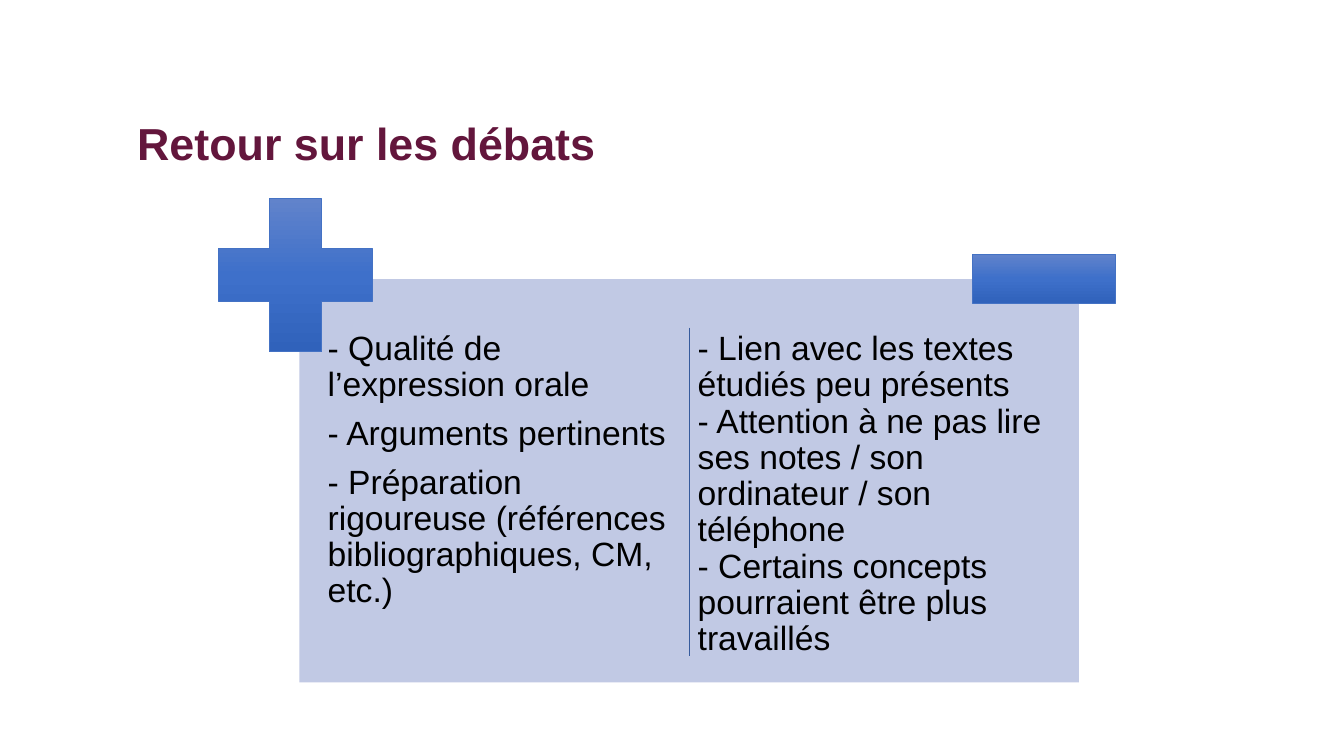
"""Build a slide weighing the strong and weak points of the debates."""
import copy

import pptx
import pptx.dml.color
import pptx.enum.shapes
import pptx.enum.text
import pptx.oxml.ns
import pptx.util
from lxml import etree

TITLE = "Retour sur les débats"
COLUMNS = [
    [
        "- Qualité de l’expression orale",
        "- Arguments pertinents",
        "- Préparation rigoureuse (références bibliographiques, CM, etc.)",
    ],
    [
        "- Lien avec les textes étudiés peu présents\n"
        "- Attention à ne pas lire ses notes / son ordinateur / son téléphone\n"
        "- Certains concepts pourraient être plus travaillés",
    ],
]
COLORS = {
    "title": "63163C", "text": "000000", "panel": "C1C9E4",
    "top": "6183CB", "middle": "3E70CA", "bottom": "3062BB",
    "outline": "4472C4", "divider": "365B9D",
}
GRADIENT = [(0, "top"), (0.5, "middle"), (1, "bottom")]
TITLE_FONT = {"name": "Arial", "size": pptx.util.Pt(32), "bold": True}
BODY_FONT = {"name": "Arial", "size": pptx.util.Pt(24), "bold": False}
BODY_PARAGRAPH = {"line_spacing": 0.9, "space_after": pptx.util.Pt(8.8)}
TITLE_AREA = (1.26, 1.06, 9.58, 0.77)
PANEL = (2.97, 2.77, 7.73, 4)
COLUMN_LEFT, COLUMN_TOP, COLUMN_STEP = 3.2, 3.24, 3.67
COLUMN_WIDTH, COLUMN_HEIGHT, INSET = 3.59, 3.42, 0.05
DIVIDER_TOP, DIVIDER_BOTTOM = 3.25, 6.51
SHAPES = pptx.enum.shapes.MSO_SHAPE
SIGNS = [
    (SHAPES.CROSS, (2.17, 1.97, 1.52, 1.52), [0.328]),
    (SHAPES.RECTANGLE, (9.64, 2.52, 1.42, 0.49), []),
]


def inches(lengths):
    return [pptx.util.Inches(length) for length in lengths]


def color(name):
    return pptx.dml.color.RGBColor.from_string(COLORS[name])


def apply(target, values):
    for name, value in values.items():
        setattr(target, name, value)


def style_spans(para, font, color_name):
    for span in para.runs:
        apply(span.font, font)
        span.font.color.rgb = color(color_name)


def add_title(page):
    title = page.shapes.title
    apply(title, dict(zip(("left", "top", "width", "height"), inches(TITLE_AREA))))
    title.text_frame.text = TITLE
    title.text_frame.vertical_anchor = pptx.enum.text.MSO_ANCHOR.MIDDLE
    para = title.text_frame.paragraphs[0]
    apply(para, {"line_spacing": 0.9, "alignment": pptx.enum.text.PP_ALIGN.LEFT})
    style_spans(para, TITLE_FONT, "title")


def add_panel(page):
    panel = page.shapes.add_shape(SHAPES.RECTANGLE, *inches(PANEL))
    panel.shadow.inherit = False
    panel.fill.solid()
    panel.fill.fore_color.rgb = color("panel")
    panel.line.fill.background()


def add_column(page, index, lines):
    left = COLUMN_LEFT + index * COLUMN_STEP
    area = (left, COLUMN_TOP, COLUMN_WIDTH, COLUMN_HEIGHT)
    frame = page.shapes.add_textbox(*inches(area)).text_frame
    margins = ("margin_left", "margin_top", "margin_right", "margin_bottom")
    apply(frame, dict.fromkeys(margins, pptx.util.Inches(INSET)))
    frame.word_wrap = True
    for number, line in enumerate(lines):
        para = frame.add_paragraph() if number else frame.paragraphs[0]
        para.text = line
        apply(para, BODY_PARAGRAPH)
        style_spans(para, BODY_FONT, "text")


def add_sign(page, kind, area, adjustments):
    sign = page.shapes.add_shape(kind, *inches(area))
    sign.shadow.inherit = False
    for index, value in enumerate(adjustments):
        sign.adjustments[index] = value
    sign.fill.gradient()
    sign.fill.gradient_angle = 270
    stops = next(sign.element.iter(pptx.oxml.ns.qn("a:gsLst")))
    stops.append(copy.deepcopy(stops[-1]))
    for stop, (position, name) in zip(sign.fill.gradient_stops, GRADIENT):
        stop.position = position
        stop.color.rgb = color(name)
    sign.line.color.rgb = color("outline")
    sign.line.width = pptx.util.Pt(0.5)


def add_divider(page):
    middle = COLUMN_LEFT + COLUMN_STEP - 0.03
    divider = page.shapes.add_connector(
        pptx.enum.shapes.MSO_CONNECTOR.STRAIGHT,
        *inches((middle, DIVIDER_TOP, middle, DIVIDER_BOTTOM)))
    divider.line.color.rgb = color("divider")
    divider.line.width = pptx.util.Pt(0.5)
    etree.SubElement(divider.element.spPr, pptx.oxml.ns.qn("a:effectLst"))


def main():
    deck = pptx.Presentation()
    deck.slide_width, deck.slide_height = inches((13.33, 7.5))
    page = deck.slides.add_slide(deck.slide_layouts.get_by_name("Title Only"))
    add_title(page)
    add_panel(page)
    for index, lines in enumerate(COLUMNS):
        add_column(page, index, lines)
    for sign in SIGNS:
        add_sign(page, *sign)
    add_divider(page)
    deck.save("out.pptx")


if __name__ == "__main__":
    main()
